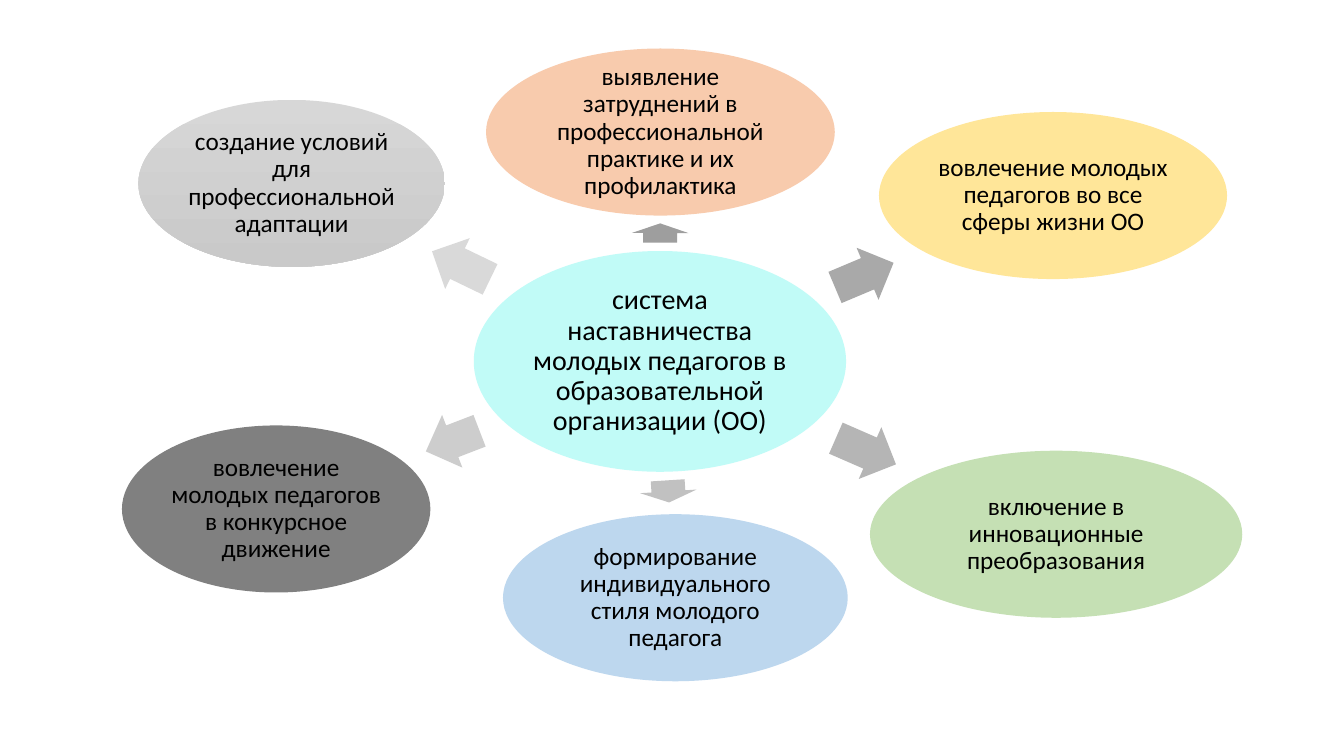
import math

import pptx
import pptx.dml.color
import pptx.enum.shapes
import pptx.enum.text
import pptx.util

RGBColor = pptx.dml.color.RGBColor
Shape = pptx.enum.shapes.MSO_SHAPE

BLACK = RGBColor(0x00, 0x00, 0x00)
AQUA = RGBColor(0xC1, 0xFB, 0xF7)
PEACH = RGBColor(0xF8, 0xCB, 0xAD)
YELLOW = RGBColor(0xFF, 0xE6, 0x99)
GREEN = RGBColor(0xC5, 0xE0, 0xB4)
BLUE = RGBColor(0xBD, 0xD7, 0xEE)
GRAY = RGBColor(0x80, 0x80, 0x80)
SILVER_TOP = RGBColor(0xD7, 0xD7, 0xD7)
SILVER_BOTTOM = RGBColor(0xC9, 0xC9, 0xC9)
ARROW_GRAYS = [RGBColor(tone, tone, tone) for tone in (0x9E, 0xA9, 0xB5, 0xC1, 0xCD, 0xD9)]

WIDTH = pptx.util.Inches(13.33)
HEIGHT = pptx.util.Inches(7.5)
COLUMN = WIDTH / 100
ROW = HEIGHT / 100
ARROW_THICKNESS = 7.47 * ROW
TASK_ROWS = 22.1

HUB_TEXT = "система наставничества молодых педагогов в образовательной организации (ОО)"
HUB_BOX = (49.1, 47.8, 27.7, 29.2)

# Each task: text, centre column, centre row, columns wide, fills, arrow length in columns, arrow place on its ray.
TASKS = [
    ("выявление затруднений в профессиональной практике и их профилактика",
     49.14, 17.47, 25.95, [PEACH], 1.43, 0.56),
    ("вовлечение молодых педагогов во все сферы жизни ОО",
     78.35, 25.87, 25.9, [YELLOW], 4.73, 0.52),
    ("включение в инновационные преобразования",
     78.58, 70.67, 27.7, [GREEN], 4.88, 0.52),
    ("формирование индивидуального стиля молодого педагога",
     50.25, 79.07, 25.65, [BLUE], 1.65, 0.55),
    ("вовлечение молодых педагогов в конкурсное движение",
     20.55, 67.33, 22.95, [GRAY], 4.28, 0.54),
    ("создание условий для профессиональной адаптации",
     21.7, 24.27, 22.8, [SILVER_TOP, SILVER_BOTTOM], 4.8, 0.54),
]


def write_text(shape, text, size=18, font="Calibri", color=BLACK, spacing=0.9):
    """Write one centred paragraph into a shape."""
    frame = shape.text_frame
    frame.word_wrap = True
    frame.vertical_anchor = pptx.enum.text.MSO_ANCHOR.MIDDLE
    inset = pptx.util.Inches(0.03)
    frame.margin_left = frame.margin_right = frame.margin_top = frame.margin_bottom = inset
    para = frame.paragraphs[0]
    para.alignment = pptx.enum.text.PP_ALIGN.CENTER
    para.line_spacing = spacing
    span = para.add_run()
    span.text = text
    span.font.size = pptx.util.Pt(size)
    span.font.name = font
    span.font.color.rgb = color


def add_centred(page, kind, center, size, fills):
    """Add a borderless shape around a centre, with one flat fill or a top-down gradient."""
    (x, y), (width, height) = center, size
    shape = page.shapes.add_shape(kind, round(x - width / 2), round(y - height / 2),
                                  round(width), round(height))
    shape.shadow.inherit = False
    shape.line.fill.background()
    if len(fills) == 1:
        shape.fill.solid()
        shape.fill.fore_color.rgb = fills[0]
    else:
        shape.fill.gradient()
        shape.fill.gradient_angle = 270
        for stop, color in zip(shape.fill.gradient_stops, fills):
            stop.color.rgb = color
    return shape


def add_bubble(page, box, text, fills, size=18):
    """Add a labelled ellipse in a box of centre column, centre row, columns and rows."""
    column, row, columns, rows = box
    bubble = add_centred(page, Shape.OVAL, (column * COLUMN, row * ROW),
                         (columns * COLUMN, rows * ROW), fills)
    write_text(bubble, text, size=size)


def add_ray_arrow(page, start_box, end_box, columns, share, color):
    """Add a block arrow on the ray between the centres of two boxes."""
    x, y = start_box[0] * COLUMN, start_box[1] * ROW
    across, down = end_box[0] * COLUMN - x, end_box[1] * ROW - y
    arrow = add_centred(page, Shape.RIGHT_ARROW, (x + share * across, y + share * down),
                        (columns * COLUMN, ARROW_THICKNESS), [color])
    arrow.adjustments[0] = 0.6
    arrow.adjustments[1] = 0.5
    arrow.rotation = math.degrees(math.atan2(down, across)) % 360


def build_radial_diagram(page, hub_box):
    """Place the hub and the tasks around it, each with its arrow."""
    add_bubble(page, hub_box, HUB_TEXT, [AQUA], size=20)
    for task, arrow_color in zip(TASKS, ARROW_GRAYS):
        text, column, row, columns, fills, arrow_columns, share = task
        task_box = (column, row, columns, TASK_ROWS)
        add_ray_arrow(page, hub_box, task_box, arrow_columns, share, arrow_color)
        add_bubble(page, task_box, text, fills)


def main():
    """Build and save the deck."""
    deck = pptx.Presentation()
    deck.slide_width = WIDTH
    deck.slide_height = HEIGHT
    page = deck.slides.add_slide(deck.slide_layouts[6])
    build_radial_diagram(page, HUB_BOX)
    deck.save("out.pptx")


if __name__ == "__main__":
    main()
